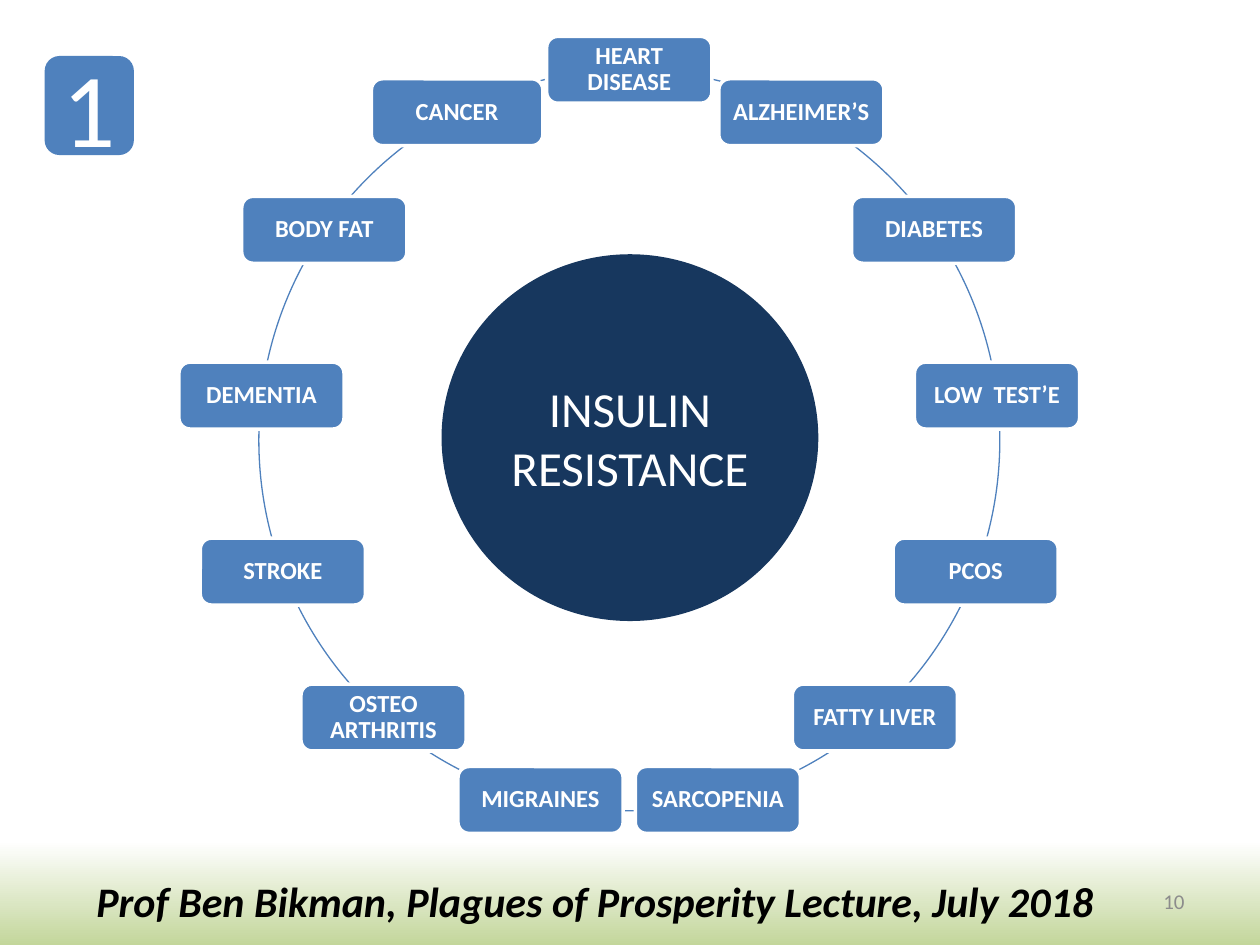
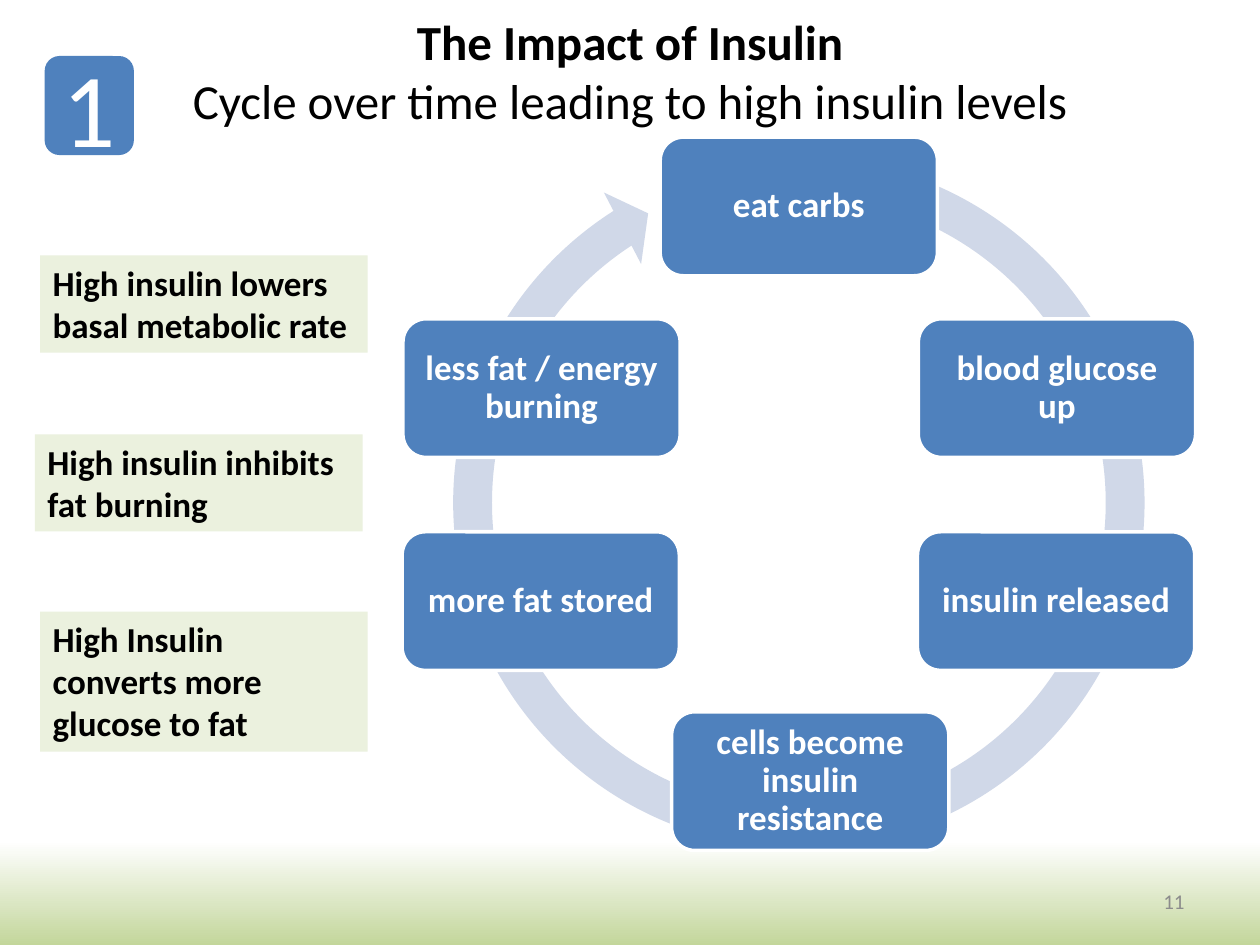
"""Build two slides on insulin: a wheel of linked ills and a cycle of causes."""
import copy
import dataclasses
import math

import pptx
import pptx.dml.color
import pptx.enum.shapes
import pptx.enum.text
import pptx.oxml.ns
import pptx.util

Pt = pptx.util.Pt
SHAPE = pptx.enum.shapes.MSO_SHAPE
ALIGN = pptx.enum.text.PP_ALIGN
ANCHOR = pptx.enum.text.MSO_ANCHOR


@dataclasses.dataclass(frozen=True)
class Theme:
    """Colours, font and type sizes of the deck."""
    blue: str = "4F81BD"
    navy: str = "17375E"
    pale: str = "D0D8E8"
    mint: str = "EBF1DE"
    green: str = "C3D69B"
    white: str = "FFFFFF"
    black: str = "000000"
    grey: str = "8C8C8C"
    font: str = "Calibri"
    badge: int = 60
    head: int = 28
    foot: int = 24
    stage: int = 20
    ill: int = 14
    page: int = 12


THEME = Theme()

HUB = "INSULIN RESISTANCE"
ILLS = ["HEART DISEASE", "ALZHEIMER’S", "DIABETES", "LOW  TEST’E", "PCOS",
        "FATTY LIVER", "SARCOPENIA", "MIGRAINES", "OSTEO\nARTHRITIS",
        "STROKE", "DEMENTIA", "BODY FAT", "CANCER"]
CREDIT = "Prof Ben Bikman, Plagues of Prosperity Lecture, July 2018"

TITLE = [("The Impact of Insulin", True),
         ("Cycle over time leading to high insulin levels", False)]
STAGES = [("eat carbs", 456.5, 118), ("blood glucose up", 604, 221.8),
          ("insulin released", 603.5, 343.5),
          ("cells become insulin resistance", 463, 446.4),
          ("more fat stored", 309, 343.5),
          ("less fat / energy burning", 309.5, 221.8)]
NOTES = [("High insulin lowers basal metabolic rate", 23, 146, 55.5),
         ("High insulin inhibits fat burning", 20, 248.2, 55.5),
         ("High Insulin converts more glucose to fat", 23, 349.5, 80)]

WHEEL = (359.6, 251.6, 211.7)
ILL = (94.4, 38.2)
WIDE = {"CANCER": 98}
STAGE = (158.4, 79.2)
ARROW = (5.3 / 100, 5.21 * 0.6, 237.28 * 0.6, 285.37 * 0.6, 5.5 / 100)


def tint(code):
    """Turn a hex code into a colour."""
    return pptx.dml.color.RGBColor.from_string(code)


def write(frame, lines, size, color, align=ALIGN.CENTER, bold=False,
          slant=False, space=None):
    """Fill a text frame with one paragraph per (text, bold) line or string."""
    frame.word_wrap = True
    if isinstance(lines, str):
        lines = [(line, bold) for line in lines.split("\n")]
    for rank, (text, heavy) in enumerate(lines):
        para = frame.paragraphs[0] if rank == 0 else frame.add_paragraph()
        para.alignment = align
        if space:
            para.line_spacing = space
        run = para.add_run()
        run.text = text
        font = run.font
        font.name, font.size = THEME.font, Pt(size)
        font.bold, font.italic = heavy, slant
        font.color.rgb = tint(color)


def draw(slide, kind, box, fill=None, edge=None, width=2):
    """Add a flat preset shape at left, top, width, height."""
    shape = slide.shapes.add_shape(kind, *map(Pt, box))
    shape.shadow.inherit = False
    if fill:
        shape.fill.solid()
        shape.fill.fore_color.rgb = tint(fill)
    else:
        shape.fill.background()
    if edge:
        shape.line.color.rgb = tint(edge)
        shape.line.width = Pt(width)
    else:
        shape.line.fill.background()
    return shape


def node(slide, text, mid, size, type_size, inset):
    """Add a white-edged rounded box centred on a point."""
    (x, y), (wide, high) = mid, size
    box = (x - wide / 2, y - high / 2, wide, high)
    shape = draw(slide, SHAPE.ROUNDED_RECTANGLE, box, THEME.blue, THEME.white)
    frame = shape.text_frame
    frame.margin_left = frame.margin_right = Pt(inset)
    frame.margin_top = frame.margin_bottom = Pt(inset)
    write(frame, text, type_size, THEME.white, bold=True, space=0.9)


def label(slide, box, text, size, color, fill=None, anchor=ANCHOR.TOP, **style):
    """Add a text box, filled on request."""
    shape = slide.shapes.add_textbox(*map(Pt, box))
    if fill:
        shape.fill.solid()
        shape.fill.fore_color.rgb = tint(fill)
    shape.text_frame.vertical_anchor = anchor
    write(shape.text_frame, text, size, color, **style)


def mark(slide, page):
    """Add the section badge and the page number."""
    badge = draw(slide, SHAPE.ROUNDED_RECTANGLE, (25.5, 32, 51, 56.6), THEME.blue)
    write(badge.text_frame, "1", THEME.badge, THEME.white)
    label(slide, (516, 500.5, 168, 28.8), page, THEME.page, THEME.grey,
          anchor=ANCHOR.MIDDLE, align=ALIGN.RIGHT)


def shade(master):
    """Fade the foot of every slide from white to green."""
    fill = master.background.fill
    fill.gradient()
    fill.gradient_angle = 270
    for stop, place, color in zip(fill.gradient_stops, (0, 1),
                                  (THEME.white, THEME.green)):
        stop.position = place
        stop.color.rgb = tint(color)
    first = master.element.find(".//" + pptx.oxml.ns.qn("a:gs"))
    hold = copy.deepcopy(first)
    hold.set("pos", "89000")
    first.addnext(hold)


def show_wheel(deck):
    """Build the wheel of ills around insulin resistance."""
    slide = deck.slides.add_slide(deck.slide_layouts[6])
    x, y, r = WHEEL
    draw(slide, SHAPE.OVAL, (x - r, y - r, 2 * r, 2 * r), None, THEME.blue, 0.75)
    for rank, ill in enumerate(ILLS):
        turn = math.tau * rank / len(ILLS)
        mid = (x + r * math.sin(turn), y - r * math.cos(turn))
        size = (WIDE.get(ill, ILL[0]), ILL[1])
        node(slide, ill, mid, size, THEME.ill, 4.3)
    hub = draw(slide, SHAPE.OVAL, (252.3, 145.3, 215.3, 209.6), THEME.navy)
    write(hub.text_frame, HUB, THEME.head, THEME.white)
    label(slide, (48, 496.8, 607, 36), CREDIT, THEME.foot, THEME.black,
          align=ALIGN.LEFT, bold=True, slant=True)
    mark(slide, "10")


def show_cycle(deck):
    """Build the cycle that leads to high insulin."""
    slide = deck.slides.add_slide(deck.slide_layouts[5])
    arrow = draw(slide, SHAPE.CIRCULAR_ARROW, (247, 77.8, 419, 419), THEME.pale)
    for rank, value in enumerate(ARROW):
        arrow.adjustments[rank] = value
    for text, x, y in STAGES:
        node(slide, text, (x, y), STAGE, THEME.stage, 5.8)
    title = slide.shapes.title
    title.left, title.top, title.width, title.height = map(Pt, (25.5, 3, 669, 75))
    title.text_frame.vertical_anchor = ANCHOR.TOP
    write(title.text_frame, TITLE, THEME.head, THEME.black)
    for text, x, y, high in NOTES:
        label(slide, (x, y, 187.2, high), text, THEME.stage, THEME.black,
              THEME.mint, align=ALIGN.LEFT, bold=True)
    mark(slide, "11")


def main():
    """Build and save the deck."""
    deck = pptx.Presentation()
    deck.slide_width, deck.slide_height = Pt(720), Pt(540)
    shade(deck.slide_master)
    show_wheel(deck)
    show_cycle(deck)
    deck.save("out.pptx")


if __name__ == "__main__":
    main()
